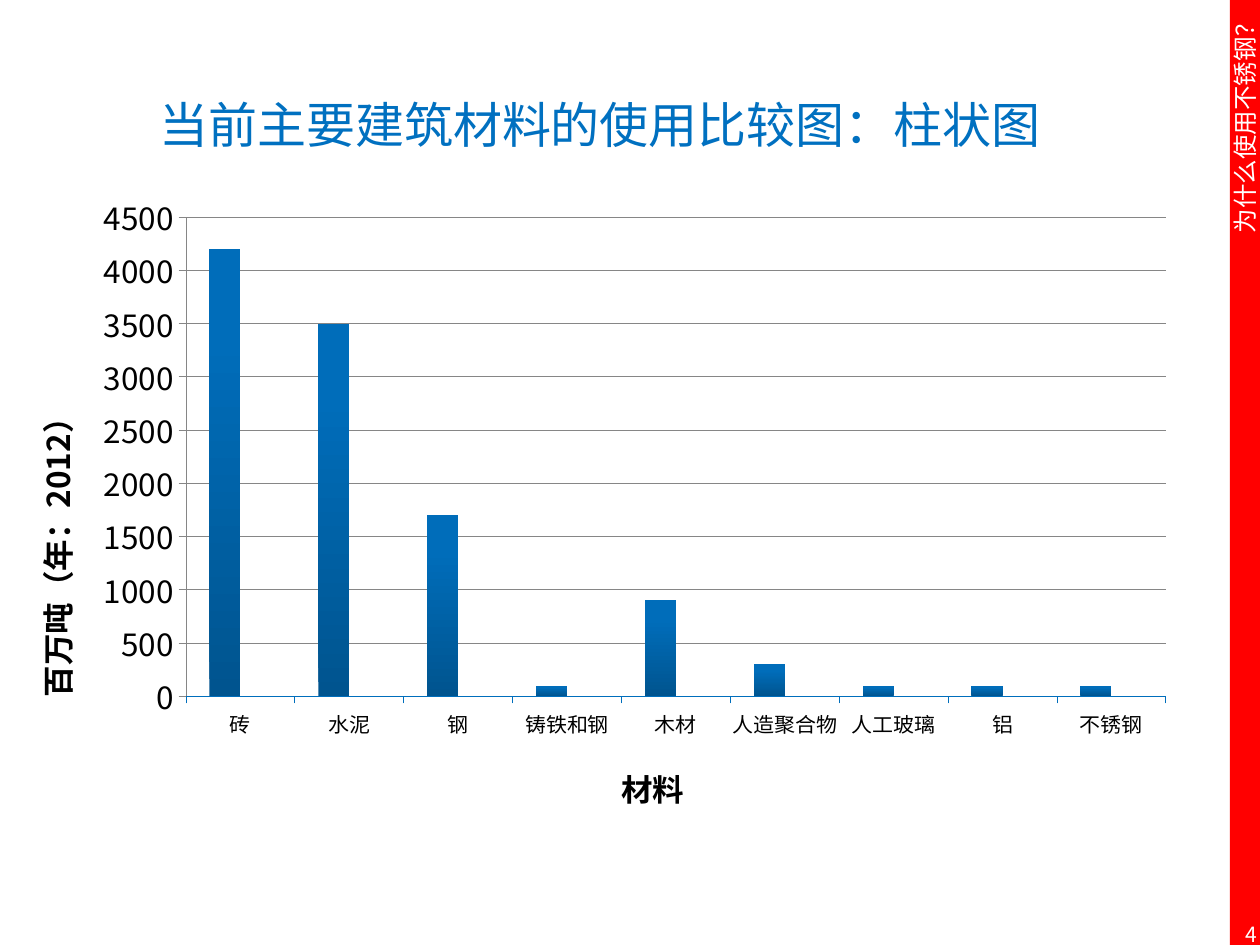
from lxml import etree
from pptx import Presentation
from pptx.chart.data import CategoryChartData
from pptx.dml.color import RGBColor
from pptx.enum.chart import XL_CHART_TYPE, XL_TICK_MARK
from pptx.enum.shapes import MSO_SHAPE
from pptx.enum.text import MSO_ANCHOR, PP_ALIGN
from pptx.oxml import parse_xml
from pptx.oxml.ns import nsdecls, qn
from pptx.util import Pt

COLUMN, OUT = XL_CHART_TYPE.COLUMN_CLUSTERED, XL_TICK_MARK.OUTSIDE
RECT = MSO_SHAPE.RECTANGLE
TOP, MIDDLE = MSO_ANCHOR.TOP, MSO_ANCHOR.MIDDLE
LEFT, CENTER, RIGHT = PP_ALIGN.LEFT, PP_ALIGN.CENTER, PP_ALIGN.RIGHT

FONT = "Noto Sans CJK SC"
BLUE, RED, WHITE, BLACK, GRAY = "0070C0", "FF0000", "FFFFFF", "000000", "868686"
SCALE = 914400 / 126

TITLE = "当前主要建筑材料的使用比较图：柱状图"
TOPIC = "为什么使用不锈钢？"
UNIT = "百万吨（年：2012）"
NUMBER = "4"
AXIS = "材料"
USE = {
    "砖": 4200, "水泥": 3500, "钢": 1700, "铸铁和钢": 100, "木材": 900,
    "人造聚合物": 300, "人工玻璃": 100, "铝": 100, "不锈钢": 100,
}
PLOT = {"x": 0.09, "y": 0.03, "w": 0.89, "h": 0.79}
NAME = {"x": 0.48, "y": 0.92}
BAR = [("00548F", 0), ("006DBA", 0.8)]


def px(*nums):
    return [round(n * SCALE) for n in nums]


def color(code):
    return RGBColor.from_string(code)


def style(font, size, code, bold=False):
    for key, val in {"name": FONT, "size": Pt(size), "bold": bold}.items():
        setattr(font, key, val)
    font.color.rgb = color(code)


def write(shape, text, size, code, align, anchor=MIDDLE, bold=False):
    frame = shape.text_frame
    frame.text = text
    frame.word_wrap = True
    frame.vertical_anchor = anchor
    para = frame.paragraphs[0]
    para.alignment = align
    style(para.runs[0].font, size, code, bold)


def add_asian(root):
    """Give Chinese text the same font as Latin text."""
    for latin in list(root.iter(qn("a:latin"))):
        asian = etree.Element(qn("a:ea"), typeface=latin.get("typeface"))
        latin.addnext(asian)


def set_line(line, code, width=0.5):
    line.color.rgb = color(code)
    line.width = Pt(width)


def place(node, spots, spot, target=""):
    """Fix a chart part at fractions of the chart's size."""
    for old in node.findall(qn("c:layout")):
        node.remove(old)
    parts = target + "".join(f'<c:{key}Mode val="edge"/>' for key in "xy")
    parts += "".join(f'<c:{key} val="{val}"/>' for key, val in spots.items())
    node.insert(spot, parse_xml(
        f'<c:layout {nsdecls("c")}><c:manualLayout>{parts}'
        "</c:manualLayout></c:layout>"))


def add_bars(slide):
    data = CategoryChartData()
    data.categories = list(USE)
    data.add_series("Series 1", list(USE.values()))
    # The empty second series keeps the bars left of their labels
    data.add_series("Series 2", [None] * len(USE))
    chart = slide.shapes.add_chart(COLUMN, *px(87, 195, 1101, 625), data).chart
    chart.has_legend = chart.has_title = False
    style(chart.font, 18, BLACK)

    plot = chart.plots[0]
    plot.vary_by_categories = False
    plot.gap_width, plot.overlap = 150, 0
    bars, spare = plot.series
    fill = bars.format.fill
    fill.gradient()
    fill.gradient_angle = 90
    for stop, (code, spot) in zip(fill.gradient_stops, BAR):
        stop.color.rgb = color(code)
        stop.position = spot
    spare.format.fill.solid()
    spare.format.fill.fore_color.rgb = color(BLUE)

    cats, vals = chart.category_axis, chart.value_axis
    for axis, size, code in ((cats, 12, "006EBC"), (vals, 18, GRAY)):
        axis.major_tick_mark = OUT
        style(axis.tick_labels.font, size, BLACK)
        set_line(axis.format.line, code)
    cats.has_major_gridlines = False
    vals.minimum_scale, vals.maximum_scale, vals.major_unit = 0, 4500, 500
    set_line(vals.major_gridlines.format.line, GRAY)
    frame = cats.axis_title.text_frame
    frame.text = AXIS
    style(frame.paragraphs[0].runs[0].font, 18, BLACK, True)

    area = chart.element.find(".//" + qn("c:plotArea"))
    place(area, PLOT, 0, '<c:layoutTarget val="inner"/>')
    place(area.find(".//" + qn("c:title")), NAME, 1)
    add_asian(chart.element)


def main():
    deck = Presentation()
    deck.slide_width, deck.slide_height = px(1260, 945)
    slide = deck.slides.add_slide(deck.slide_layouts[5])
    shapes = slide.shapes

    strip = shapes.add_shape(RECT, *px(1230, 0, 30, 945))
    strip.shadow.inherit = False
    strip.fill.solid()
    strip.fill.fore_color.rgb = color(RED)
    strip.line.fill.background()
    write(strip, TOPIC, 14, WHITE, RIGHT)
    strip.text_frame._txBody.bodyPr.set("vert", "vert270")

    add_bars(slide)

    label = shapes.add_textbox(*px(-146, 481, 407, 50))
    label.rotation = 270
    write(label, UNIT, 18, BLACK, LEFT, TOP, True)

    title = shapes.title
    title.left, title.top, title.width, title.height = px(33, 69, 1134, 110)
    write(title, TITLE, 28, BLUE, CENTER)

    page = shapes.add_textbox(*px(1215, 909, 54, 50))
    write(page, NUMBER, 12, WHITE, RIGHT)

    add_asian(slide.element)
    deck.save("out.pptx")


if __name__ == "__main__":
    main()
